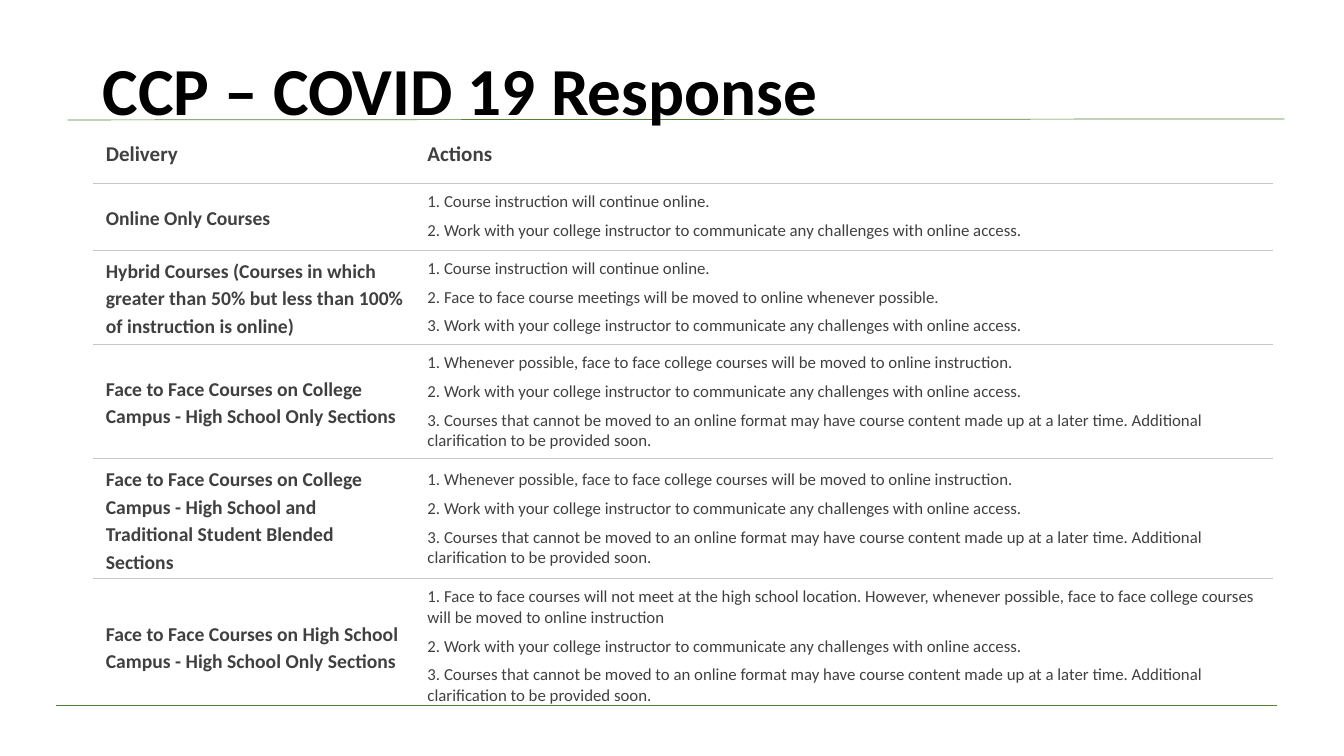
from dataclasses import dataclass
from typing import Any

from lxml import etree
from pptx import Presentation
from pptx.dml.color import RGBColor
from pptx.enum.shapes import MSO_CONNECTOR
from pptx.enum.text import MSO_ANCHOR
from pptx.oxml.ns import qn
from pptx.util import Inches, Pt

STRAIGHT = MSO_CONNECTOR.STRAIGHT
TOP, MIDDLE, BOTTOM = MSO_ANCHOR.TOP, MSO_ANCHOR.MIDDLE, MSO_ANCHOR.BOTTOM

BLACK = RGBColor(0x00, 0x00, 0x00)
GRAY = RGBColor(0x40, 0x40, 0x40)
GREEN = RGBColor(0x54, 0x82, 0x35)
RULE = RGBColor(0xC7, 0xC6, 0xC1)

PLAIN_STYLE = "{2D5ABB26-0587-4C30-8999-92F81FD0307C}"
WIDTHS = (3.19, 8.52)
CELL = {
    "margin_left": Inches(0.13),
    "margin_top": Inches(0.06),
    "margin_right": Inches(0.09),
    "margin_bottom": Inches(0.06),
}
TITLE = {"name": "Calibri", "size": Pt(48), "bold": True}
HEAD = {"name": "Calibri", "size": Pt(15), "bold": True}
LABEL = {"name": "Calibri", "size": Pt(14), "bold": True}
BODY = {"name": "Calibri", "size": Pt(12), "bold": False}
NO_GAP = {"space_after": Pt(0)}
LABEL_GAP = {"line_spacing": 1.15}
STEP_GAP = {"space_after": Pt(6)}

ONLINE = "Course instruction will continue online."
WORK = "Work with your college instructor to communicate any challenges with online access."
MOVED = "Whenever possible, face to face college courses will be moved to online instruction."
LATER = (
    "Courses that cannot be moved to an online format may have course content "
    "made up at a later time. Additional clarification to be provided soon."
)


@dataclass
class Course:
    label: str
    steps: tuple[str, ...]
    height: float
    after: int = 0


@dataclass
class Line:
    x1: float
    y1: float
    x2: float
    y2: float


COURSES = (
    Course("Online Only Courses", (ONLINE, WORK), 0.66),
    Course(
        "Hybrid Courses (Courses in which greater than 50% but less than 100% "
        "of instruction is online)",
        (ONLINE, "Face to face course meetings will be moved to online whenever possible.", WORK),
        0.94,
    ),
    Course(
        "Face to Face Courses on College Campus - High School Only Sections",
        (MOVED, WORK, LATER), 1.13, 10,
    ),
    Course(
        "Face to Face Courses on College Campus - High School and Traditional "
        "Student Blended Sections",
        (MOVED, WORK, LATER), 1.13, 10,
    ),
    Course(
        "Face to Face Courses on High School Campus - High School Only Sections",
        (
            "Face to face courses will not meet at the high school location. However, "
            "whenever possible, face to face college courses will be moved to online instruction",
            WORK,
            LATER,
        ),
        1.34, 10,
    ),
)
LINES = (Line(0.67, 1.19, 12.74, 1.18), Line(0.56, 7, 12.67, 7))


def apply(target: Any, values: dict[str, Any]) -> None:
    for name, value in values.items():
        setattr(target, name, value)


def write(frame: Any, texts: list[str], font: dict, gap: dict, color: RGBColor) -> None:
    for i, text in enumerate(texts):
        para = frame.add_paragraph() if i else frame.paragraphs[0]
        apply(para, gap)
        run = para.add_run()
        run.text = text
        apply(run.font, font)
        run.font.color.rgb = color


def underline(cell: Any) -> None:
    """Draw the rule below a table cell."""
    edge = etree.SubElement(cell._tc.get_or_add_tcPr(), qn("a:lnB"), w=str(Pt(0.75)))
    fill = etree.SubElement(edge, qn("a:solidFill"))
    etree.SubElement(fill, qn("a:srgbClr"), val=str(RULE))


def fill_cell(cell: Any, texts: list[str], font: dict, gap: dict, anchor: Any, ruled: bool) -> None:
    apply(cell, CELL)
    cell.vertical_anchor = anchor
    write(cell.text_frame, texts, font, gap, GRAY)
    if ruled:
        underline(cell)
    cell.fill.background()


def draw_line(slide: Any, line: Line) -> None:
    ends = [Inches(v) for v in (line.x1, line.y1, line.x2, line.y2)]
    rule = slide.shapes.add_connector(STRAIGHT, *ends)
    rule.line.color.rgb = GREEN
    rule.line.width = Pt(0.5)
    etree.SubElement(rule._element.spPr, qn("a:effectLst"))


def draw_title(slide: Any) -> None:
    box = slide.shapes.add_textbox(Inches(0.92), Inches(0.32), Inches(11.5), Inches(1.02))
    frame = box.text_frame
    frame.word_wrap = True
    frame.vertical_anchor = BOTTOM
    write(frame, ["CCP – COVID 19 Response"], TITLE, {"line_spacing": 0.9}, BLACK)


def draw_table(slide: Any) -> None:
    heights = [0.48] + [course.height for course in COURSES]
    shape = slide.shapes.add_table(
        len(heights), len(WIDTHS), Inches(0.92), Inches(1.34),
        Inches(sum(WIDTHS)), Inches(sum(heights)),
    )
    table = shape.table
    apply(table, {"first_row": False, "horz_banding": False})
    table._tbl.tblPr.find(qn("a:tableStyleId")).text = PLAIN_STYLE
    for col, width in zip(table.columns, WIDTHS):
        col.width = Inches(width)
    for row, height in zip(table.rows, heights):
        row.height = Inches(height)
    for col, text in enumerate(("Delivery", "Actions")):
        fill_cell(table.cell(0, col), [text], HEAD, NO_GAP, TOP, True)
    for row, course in enumerate(COURSES, 1):
        ruled = row < len(COURSES)
        gap = LABEL_GAP | {"space_after": Pt(course.after)}
        steps = [f"{n}. {step}" for n, step in enumerate(course.steps, 1)]
        fill_cell(table.cell(row, 0), [course.label], LABEL, gap, MIDDLE, ruled)
        fill_cell(table.cell(row, 1), steps, BODY, STEP_GAP, MIDDLE, ruled)


def main() -> None:
    deck = Presentation()
    apply(deck, {"slide_width": Inches(13.33), "slide_height": Inches(7.5)})
    slide = deck.slides.add_slide(deck.slide_layouts[6])
    for line in LINES:
        draw_line(slide, line)
    draw_title(slide)
    draw_table(slide)
    deck.save("out.pptx")


if __name__ == "__main__":
    main()
